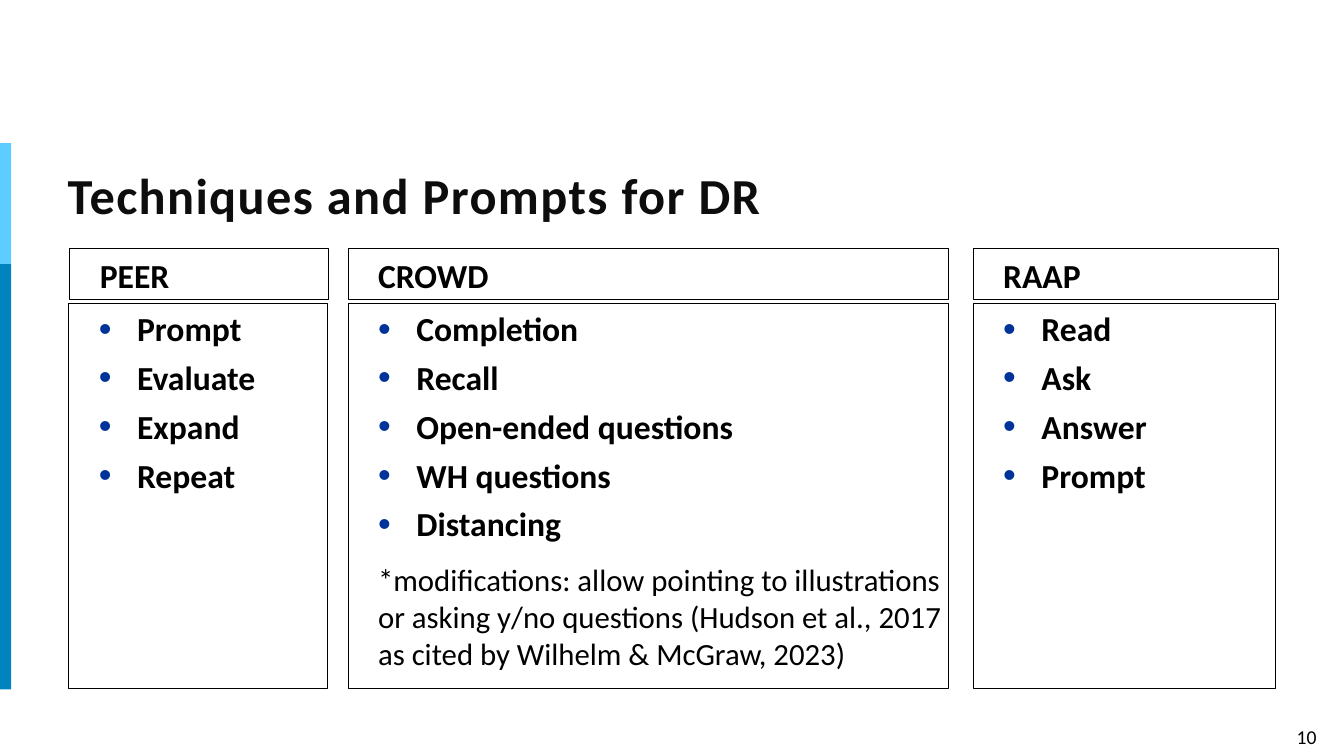
from lxml import etree
from pptx import Presentation
from pptx.dml.color import RGBColor
from pptx.enum.shapes import MSO_SHAPE
from pptx.enum.text import MSO_ANCHOR, MSO_AUTO_SIZE, PP_ALIGN
from pptx.oxml.ns import qn
from pptx.util import Inches, Pt

RECTANGLE = MSO_SHAPE.RECTANGLE
TOP, MIDDLE, BOTTOM = MSO_ANCHOR.TOP, MSO_ANCHOR.MIDDLE, MSO_ANCHOR.BOTTOM
NO_FIT = MSO_AUTO_SIZE.NONE
LEFT, CENTER = PP_ALIGN.LEFT, PP_ALIGN.CENTER

FONT = "Calibri"
BLACK = "000000"
BULLET_COLOR = "003399"
BULLET_INDENT = Inches(0.38)
HEADER_TOP, HEADER_HEIGHT = 2.46, 0.51
LIST_TOP, LIST_HEIGHT = 3.01, 3.82

NOTE = ("*modifications: allow pointing to illustrations or asking y/no questions "
        "(Hudson et al., 2017 as cited by Wilhelm & McGraw, 2023)")
# Heading, header box (left, width), list box (left, width), items, note
COLUMNS = [
    ("PEER", (0.69, 2.57), (0.68, 2.57),
     ["Prompt", "Evaluate", "Expand", "Repeat"], None),
    ("CROWD", (3.45, 5.95), (3.45, 5.95),
     ["Completion", "Recall", "Open-ended questions", "WH questions", "Distancing"], NOTE),
    ("RAAP", (9.65, 3.03), (9.65, 3.0),
     ["Read", "Ask", "Answer", "Prompt"], None),
]


def color(value):
    return RGBColor.from_string(value)


def add_rectangle(page, box, fill=None, line=None):
    shape = page.shapes.add_shape(RECTANGLE, *map(Inches, box))
    shape.shadow.inherit = False
    if fill:
        shape.fill.solid()
        shape.fill.fore_color.rgb = color(fill)
    else:
        shape.fill.background()
    if line:
        shape.line.color.rgb = color(line)
        shape.line.width = Pt(0.25)
    else:
        shape.line.fill.background()
    return shape


def set_frame(shape, insets, anchor=TOP):
    frame = shape.text_frame
    frame.word_wrap = True
    frame.auto_size = NO_FIT
    frame.vertical_anchor = anchor
    (frame.margin_left, frame.margin_top,
     frame.margin_right, frame.margin_bottom) = map(Inches, insets)
    return frame


def add_bullet(para):
    properties = para._p.get_or_add_pPr()
    properties.set("marL", str(BULLET_INDENT))
    properties.set("indent", str(-BULLET_INDENT))
    bullet_color = etree.SubElement(properties, qn("a:buClr"))
    etree.SubElement(bullet_color, qn("a:srgbClr"), val=BULLET_COLOR)
    etree.SubElement(properties, qn("a:buSzPct"), val="108000")
    etree.SubElement(properties, qn("a:buFont"), typeface="Arial")
    etree.SubElement(properties, qn("a:buChar"), char="•")


def write(frame, text, size=24, bold=True, ink=BLACK, align=LEFT,
          line_spacing=None, before=0, after=6, bullet=False):
    """Fill the empty first paragraph of the frame, or add another one."""
    para = frame.paragraphs[0]
    if para.runs:
        para = frame.add_paragraph()
    para.alignment = align
    para.space_before, para.space_after = Pt(before), Pt(after)
    if line_spacing:
        para.line_spacing = line_spacing
    if bullet:
        add_bullet(para)
    span = para.add_run()
    span.text = text
    span.font.name = FONT
    span.font.size = Pt(size)
    span.font.bold = bold
    span.font.color.rgb = color(ink)
    return span


def add_side_bars(page, left, top, width):
    upper, lower = 1.2, 4.22
    add_rectangle(page, (left, top, width, upper), fill="5DCDFF")
    add_rectangle(page, (left, top + upper, width, lower), fill="0083BF")


def set_title(page, text, box):
    title = page.shapes.title
    title.left, title.top, title.width, title.height = map(Inches, box)
    frame = set_frame(title, (0, 0.2, 0.1, 0.05), MIDDLE)
    span = write(frame, text, size=36, ink="0D0D0D", line_spacing=0.8, after=0)
    span.font._element.set("spc", "100")


def add_header(page, text, box):
    shape = add_rectangle(page, box, line=BLACK)
    frame = set_frame(shape, (0.3, 0.05, 0.05, 0.05), BOTTOM)
    write(frame, text, line_spacing=0.7)


def add_list(page, items, note, box):
    shape = add_rectangle(page, box, line=BLACK)
    frame = set_frame(shape, (0.3, 0.05, 0.05, 0.05))
    for item in items:
        write(frame, item, bullet=True)
    if note:
        write(frame, note, size=22, bold=False, before=6)


def add_page_number(page, number, box):
    text_box = page.shapes.add_textbox(*map(Inches, box))
    frame = set_frame(text_box, (0.1, 0.05, 0.1, 0.05))
    write(frame, number, size=14, bold=False, align=CENTER, after=0)


def main():
    deck = Presentation()
    deck.slide_width, deck.slide_height = Inches(13.33), Inches(7.5)
    page = deck.slides.add_slide(deck.slide_layouts.get_by_name("Title Only"))

    # Frame of the page
    add_side_bars(page, 0, 1.42, 0.11)
    add_page_number(page, "10", (12.63, 7.14, 0.66, 0.34))
    set_title(page, "Techniques and Prompts for DR", (0.67, 1.55, 12.01, 0.71))

    # Three columns of techniques
    for heading, header_span, list_span, items, note in COLUMNS:
        left, width = header_span
        add_header(page, heading, (left, HEADER_TOP, width, HEADER_HEIGHT))
        left, width = list_span
        add_list(page, items, note, (left, LIST_TOP, width, LIST_HEIGHT))

    deck.save("out.pptx")


if __name__ == "__main__":
    main()
